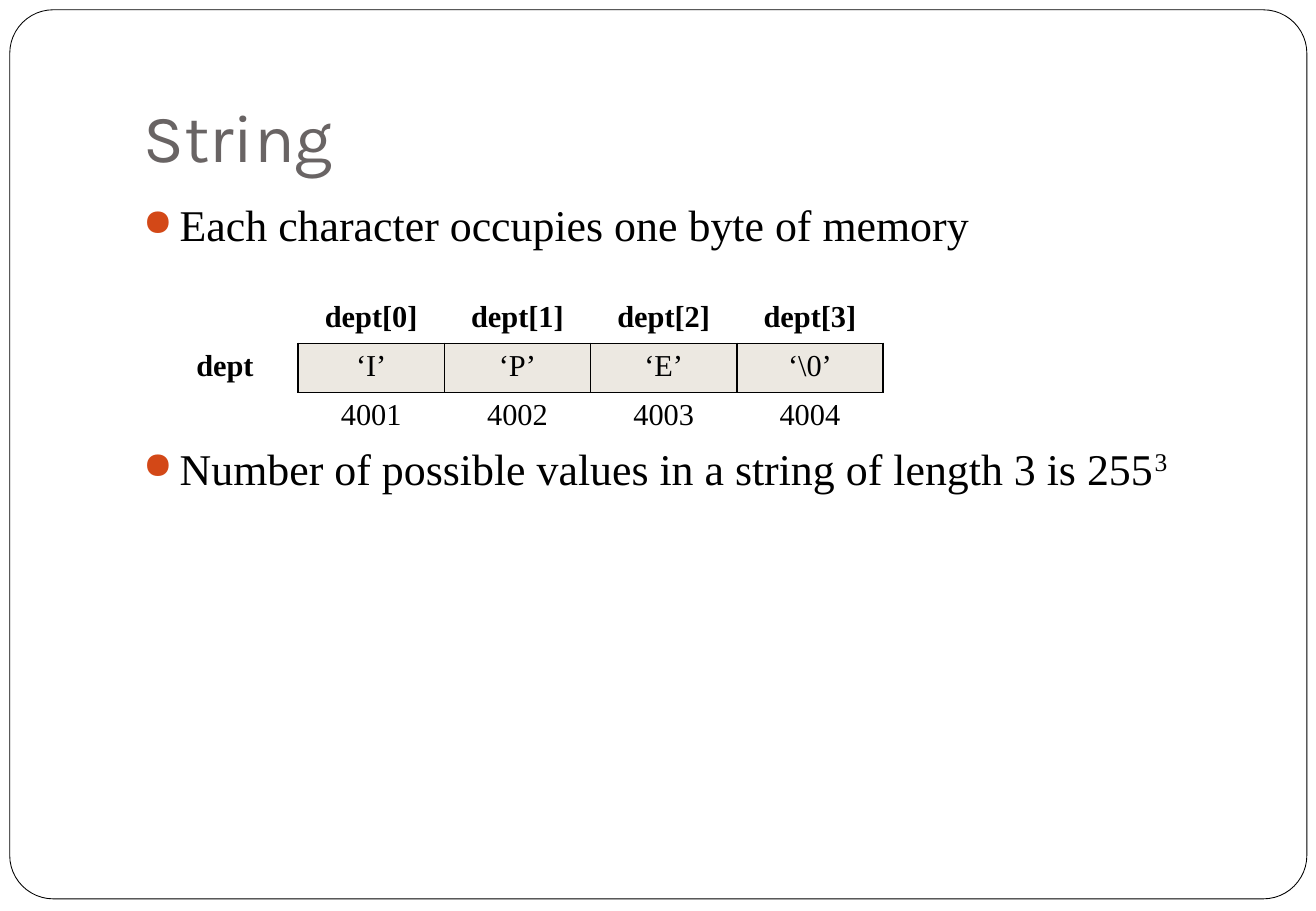
from lxml import etree
from pptx import Presentation, util as u
from pptx.dml.color import RGBColor
from pptx.enum import shapes, text
from pptx.oxml.ns import qn

# Content
TITLE = "String"
BULLETS = [  # text, superscript, space before
    ("Each character occupies one byte of memory", "", 5.8),
    ("Number of possible values in a string of length 3 is 255", "3", 113),
]
MEMORY = [
    ["", "dept[0]", "dept[1]", "dept[2]", "dept[3]"],
    ["dept", "‘I’", "‘P’", "‘E’", "‘\\0’"],
    ["", "4001", "4002", "4003", "4004"],
]
SERIF = "Times New Roman"
BLACK, WHITE, GREY, ORANGE, SAND = "000000", "FFFFFF", "696464", "D34817", "ECE8E1"
NO_STYLE = "{2D5ABB26-0587-4C30-8999-92F81FD0307C}"

# Layout, in points
SLIDE = (780, 540)
FRAME = (5.8, 5.8, 768.8, 527)
TITLE_BOX = (77.8, 21.6, 663, 90)
BODY_BOX = (77.8, 113.8, 663, 360)
TABLE_LEFT, TABLE_TOP, COL_W, ROW_H = 90, 174.2, 86.7, 29.3
INDENT = 21.6


def rgb(color):
    return RGBColor.from_string(color)


def pts(values):
    return [u.Pt(v) for v in values]


def set_attrs(obj, **values):
    for name, value in values.items():
        setattr(obj, name, value)


def add_run(p, string, size, color=BLACK, font=SERIF, bold=False):
    r = p.add_run()
    r.text = string
    set_attrs(r.font, size=u.Pt(size), name=font, bold=bold)
    r.font.color.rgb = rgb(color)
    return r


def add_bullet(p):
    pPr = p._p.get_or_add_pPr()
    pPr.set("marL", str(u.Pt(INDENT)))
    pPr.set("indent", str(-u.Pt(INDENT)))
    clr = etree.SubElement(pPr, qn("a:buClr"))
    etree.SubElement(clr, qn("a:srgbClr"), val=ORANGE)
    etree.SubElement(pPr, qn("a:buSzPct"), val="85000")
    etree.SubElement(pPr, qn("a:buChar"), char="●")


def add_borders(cell):
    tcPr = cell._tc.get_or_add_tcPr()
    for i, side in enumerate(("lnL", "lnR", "lnT", "lnB")):
        ln = etree.Element(qn("a:" + side), w=str(u.Pt(1)))
        fill = etree.SubElement(ln, qn("a:solidFill"))
        etree.SubElement(fill, qn("a:srgbClr"), val=BLACK)
        tcPr.insert(i, ln)


prs = Presentation()
set_attrs(prs, slide_width=u.Pt(SLIDE[0]), slide_height=u.Pt(SLIDE[1]))
s = prs.slides.add_slide(prs.slide_layouts[5])

# Rounded frame, behind the title
frame = s.shapes.add_shape(shapes.MSO_SHAPE.ROUNDED_RECTANGLE, *pts(FRAME))
frame.adjustments[0] = 0.049
frame.shadow.inherit = False
frame.fill.solid()
frame.fill.fore_color.rgb = rgb(WHITE)
frame.line.color.rgb = rgb(BLACK)
frame.line.width = u.Pt(0.5)
s.shapes._spTree.insert(2, frame._element)

# Title
title = s.shapes.title
set_attrs(title, **dict(zip(("left", "top", "width", "height"), pts(TITLE_BOX))))
tf = title.text_frame
set_attrs(tf, vertical_anchor=text.MSO_ANCHOR.BOTTOM, word_wrap=True,
          margin_bottom=u.Pt(7.2), auto_size=text.MSO_AUTO_SIZE.NONE)
tf.paragraphs[0].alignment = text.PP_ALIGN.LEFT
add_run(tf.paragraphs[0], TITLE, 40, GREY, "Karla")

# Bullets, with room for the table between them
tf = s.shapes.add_textbox(*pts(BODY_BOX)).text_frame
tf.word_wrap = True
for i, (line, power, before) in enumerate(BULLETS):
    p = tf.add_paragraph() if i else tf.paragraphs[0]
    p.space_before = u.Pt(before)
    add_bullet(p)
    add_run(p, line, 26)
    if power:
        add_run(p, power, 26).font._element.set("baseline", "30000")

# Memory table
rows, cols = len(MEMORY), len(MEMORY[0])
box = pts((TABLE_LEFT, TABLE_TOP, COL_W * cols, ROW_H * rows))
table = s.shapes.add_table(rows, cols, *box).table
set_attrs(table, first_row=False, horz_banding=False)
table._tbl.tblPr.find(qn("a:tableStyleId")).text = NO_STYLE
for col in table.columns:
    col.width = u.Pt(COL_W)
for i, row in enumerate(MEMORY):
    table.rows[i].height = u.Pt(ROW_H)
    for j, value in enumerate(row):
        cell = table.cell(i, j)
        is_byte = i == 1 and j > 0
        if is_byte:
            cell.fill.solid()
            cell.fill.fore_color.rgb = rgb(SAND)
            add_borders(cell)
        else:
            cell.fill.background()
        if value:
            p = cell.text_frame.paragraphs[0]
            p.alignment = text.PP_ALIGN.CENTER
            add_run(p, value, 18, bold=i == 0 or j == 0)

prs.save("out.pptx")
